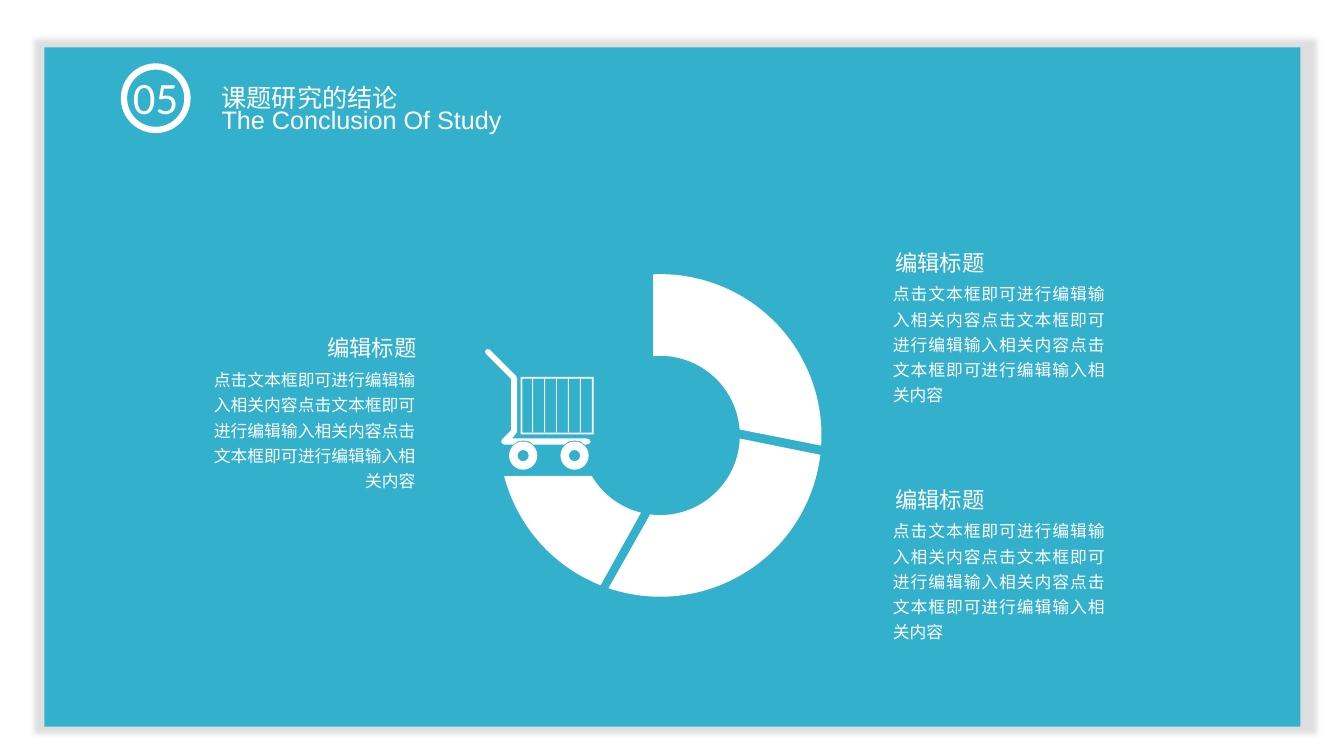
from dataclasses import dataclass
from math import cos, radians, sin

from lxml import etree
from pptx import Presentation
from pptx.dml.color import RGBColor
from pptx.enum.shapes import MSO_SHAPE
from pptx.enum.text import MSO_AUTO_SIZE, PP_ALIGN
from pptx.oxml.ns import qn
from pptx.shapes.autoshape import Shape
from pptx.shapes.shapetree import SlideShapes
from pptx.util import Inches, Length, Pt

RECT, OVAL = MSO_SHAPE.RECTANGLE, MSO_SHAPE.OVAL
DONUT, FRAME = MSO_SHAPE.DONUT, MSO_SHAPE.FRAME
LEFT, MID = PP_ALIGN.LEFT, PP_ALIGN.CENTER
RIGHT, FULL = PP_ALIGN.RIGHT, PP_ALIGN.JUSTIFY
GROW = MSO_AUTO_SIZE.SHAPE_TO_FIT_TEXT

COLS, ROWS = 133.33, 75
Point = tuple[float, float]


@dataclass(frozen=True)
class Theme:
    blue: str = "33B0CC"
    white: str = "FFFFFF"
    shade: str = "A6A6A6"
    cjk: str = "Noto Sans CJK SC"
    latin: str = "Arial"
    digit: str = "Calibri"
    large: int = 32
    head: int = 18
    title: int = 16
    body: int = 12
    ring: float = 4.5


@dataclass(frozen=True)
class Box:
    col: float
    row: float
    wide: float
    high: float


@dataclass(frozen=True)
class Label:
    box: Box
    text: str
    size: int
    font: str
    align: PP_ALIGN = LEFT
    space: float = 1.0
    wrap: bool = True


@dataclass(frozen=True)
class Note:
    col: float
    row: float
    shift: float
    title: PP_ALIGN
    body: PP_ALIGN


@dataclass(frozen=True)
class Slice:
    outer: Point
    inner: Point


THEME = Theme()
PANEL = Box(4.4, 4.7, 124.6, 67.4)
BADGE = Box(12.3, 6.6, 6.3, 6.3)
TITLE = "编辑标题"
BODY = "点击文本框即可进行编辑输入相关内容" * 3
HEADS = (
    Label(Box(11.1, 6.4, 8.7, 6.4), "05", THEME.large, THEME.digit, MID),
    Label(Box(21, 4.7, 19.7, 6.2), "课题研究的结论", THEME.head, THEME.cjk,
          space=2.0, wrap=False),
    Label(Box(21, 9.9, 54.9, 4), "The Conclusion Of Study", THEME.head, THEME.latin),
)
NOTES = (
    Note(87.6, 27.2, -1.4, MID, FULL),
    Note(87.6, 50.7, -1.4, MID, FULL),
    Note(19.2, 35.7, 9, RIGHT, RIGHT),
)
HUB: Point = (65.5, 43.2)
OUTER, INNER = 16, 7.9
SLICES = (
    Slice((-2.5, 93.6), (-5.1, 85.7)),
    Slice((96.9, 198.7), (92.2, 187.3)),
    Slice((201.7, 255.4), (194, 239.5)),
)
BASKET = Box(51.65, 37.4, 7.25, 5.7)
BARS = 5
WHEELS = (50.5, 55.6)
HANDLE: tuple[Point, ...] = (
    (58.2, 43.5), (50.8, 43.5), (51.2, 43), (51.3, 42.8), (51.3, 37.5),
    (51.2, 37.3), (48.6, 34.7), (48.4, 34.63), (48.2, 34.7), (48.13, 34.9),
    (48.2, 35.1), (50.7, 37.6), (50.7, 42.7), (49.8, 43.6), (49.73, 43.8),
    (49.8, 44), (50, 44.1), (50.9, 44.1), (51.35, 43.8), (51.9, 43.7),
    (52.5, 43.8), (52.9, 44.1), (56, 44.1), (56.4, 43.8), (57, 43.7),
    (57.6, 43.8), (58, 44.1), (58.2, 44.1), (58.48, 44), (58.6, 43.8),
    (58.48, 43.6),
)


def cell(count: float) -> Length:
    return Inches(count / 10)


def paint(shape: Shape, fill: str) -> None:
    shape.shadow.inherit = False
    shape.fill.solid()
    shape.fill.fore_color.rgb = RGBColor.from_string(fill)
    shape.line.fill.background()


def place(shapes: SlideShapes, kind: MSO_SHAPE, box: Box, fill: str) -> Shape:
    shape = shapes.add_shape(kind, cell(box.col), cell(box.row),
                             cell(box.wide), cell(box.high))
    paint(shape, fill)
    return shape


def trace(shapes: SlideShapes, points: list[Point]) -> None:
    spots = [(cell(x), cell(y)) for x, y in points]
    pen = shapes.build_freeform(*spots[0])
    pen.add_line_segments(spots[1:], close=True)
    paint(pen.convert_to_shape(), THEME.white)


def arc(reach: float, start: float, stop: float, steps: int = 60) -> list[Point]:
    turns = [radians(start + (stop - start) * i / steps) for i in range(steps + 1)]
    return [(HUB[0] + reach * sin(t), HUB[1] - reach * cos(t)) for t in turns]


def write(shapes: SlideShapes, label: Label) -> None:
    box = label.box
    frame = shapes.add_textbox(cell(box.col), cell(box.row),
                               cell(box.wide), cell(box.high)).text_frame
    frame.word_wrap = label.wrap
    frame.auto_size = GROW
    para = frame.paragraphs[0]
    para.alignment = label.align
    para.line_spacing = label.space
    run = para.add_run()
    run.text = label.text
    run.font.size = Pt(label.size)
    run.font.color.rgb = RGBColor.from_string(THEME.white)
    run.font.name = label.font
    etree.SubElement(run.font._element, qn("a:ea"), typeface=label.font)


def shade(shape: Shape) -> None:
    glow = etree.SubElement(
        shape._element.spPr.find(qn("a:effectLst")), qn("a:outerShdw"),
        blurRad=str(Pt(4)), dist=str(Pt(2)), dir="0", sx="102000", sy="102000",
        algn="ctr", rotWithShape="0")
    tint = etree.SubElement(glow, qn("a:srgbClr"), val=THEME.shade)
    etree.SubElement(tint, qn("a:alpha"), val="36000")


def draw_cart(shapes: SlideShapes) -> None:
    place(shapes, FRAME, BASKET, THEME.white).adjustments[0] = 0.03
    trace(shapes, list(HANDLE))
    for col in WHEELS:
        wheel = place(shapes, DONUT, Box(col, 43.8, 2.8, 2.8), THEME.white)
        wheel.adjustments[0] = 0.3
    for i in range(BARS):
        place(shapes, RECT, Box(52.8 + 1.18 * i, 37.6, 0.1, 5.3), THEME.white)


def draw_note(shapes: SlideShapes, note: Note) -> None:
    write(shapes, Label(Box(note.col, note.row, 23, 13.6), BODY, THEME.body,
                        THEME.cjk, note.body, 1.25))
    write(shapes, Label(Box(note.col + note.shift, note.row - 3, 14.1, 3.7), TITLE,
                        THEME.title, THEME.cjk, note.title))


def main() -> None:
    deck = Presentation()
    deck.slide_width, deck.slide_height = cell(COLS), cell(ROWS)
    shapes = deck.slides.add_slide(deck.slide_layouts[6]).shapes
    shade(place(shapes, RECT, PANEL, THEME.blue))
    badge = place(shapes, OVAL, BADGE, THEME.blue)
    badge.fill.background()
    badge.line.color.rgb = RGBColor.from_string(THEME.white)
    badge.line.width = Pt(THEME.ring)
    for label in HEADS:
        write(shapes, label)
    draw_cart(shapes)
    for part in SLICES:
        trace(shapes, arc(OUTER, *part.outer) + arc(INNER, *part.inner)[::-1])
    for note in NOTES:
        draw_note(shapes, note)
    deck.save("out.pptx")


if __name__ == "__main__":
    main()
